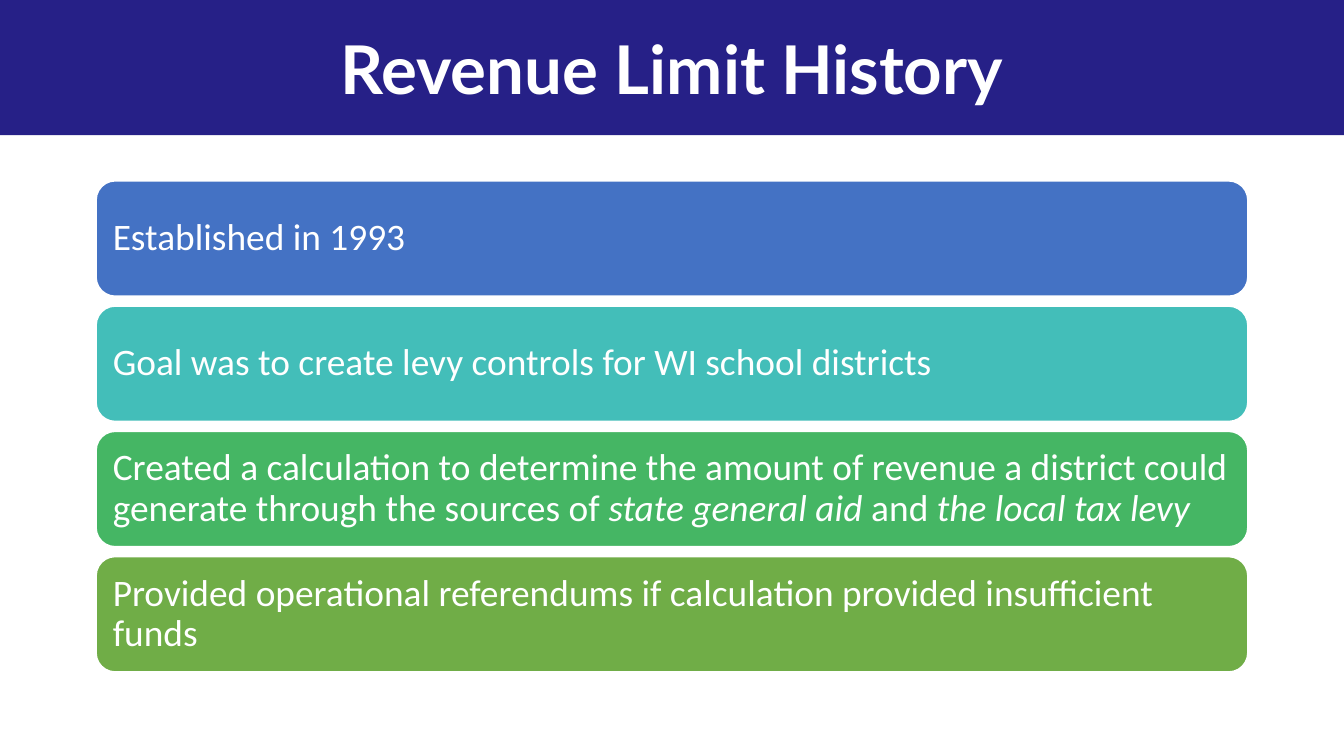
from pptx import Presentation
from pptx.dml.color import RGBColor
from pptx.enum.shapes import MSO_SHAPE
from pptx.enum.text import MSO_ANCHOR, MSO_AUTO_SIZE, PP_ALIGN
from pptx.util import Pt

WHITE = RGBColor(0xFF, 0xFF, 0xFF)
NAVY = RGBColor(0x26, 0x20, 0x87)
BLUE = RGBColor(0x44, 0x72, 0xC4)
TEAL = RGBColor(0x43, 0xBE, 0xB9)
GREEN = RGBColor(0x45, 0xB6, 0x64)
OLIVE = RGBColor(0x70, 0xAD, 0x47)

WIDTH, HEIGHT = 720, 405
HEAD = 72.5
LEFT, TOP = 51.4, 96.8
BAR_W, BAR_H, STEP = 617.2, 62, 67.1

# Each bar: fill colour and (text, italic) runs
BARS = [
    (BLUE, [("Established in 1993", False)]),
    (TEAL, [("Goal was to create levy controls for WI school districts", False)]),
    (GREEN, [
        ("Created a calculation to determine the amount of revenue a district "
         "could generate through the sources of ", False),
        ("state general aid ", True),
        ("and", False),
        (" the local tax levy", True),
    ]),
    (OLIVE, [("Provided operational referendums if calculation provided "
              "insufficient funds", False)]),
]


def add_run(para, text, font, size, bold=False, italic=False):
    run = para.add_run()
    run.text = text
    run.font.name = font
    run.font.size = Pt(size)
    run.font.bold = bold
    run.font.italic = italic
    run.font.color.rgb = WHITE


def add_band(slide):
    band = slide.shapes.add_shape(MSO_SHAPE.RECTANGLE, 0, 0, Pt(WIDTH), Pt(HEAD))
    band.shadow.inherit = False
    band.fill.solid()
    band.fill.fore_color.rgb = NAVY
    band.line.fill.background()
    # Behind the title: first in the tree after its two property elements
    slide.shapes._spTree.insert(2, band._element)


def set_title(slide, text):
    title = slide.shapes.title
    title.left, title.top = Pt(0), Pt(0)
    title.width, title.height = Pt(WIDTH), Pt(HEAD)
    frame = title.text_frame
    frame.auto_size = MSO_AUTO_SIZE.NONE
    frame.vertical_anchor = MSO_ANCHOR.MIDDLE
    para = frame.paragraphs[0]
    para.alignment = PP_ALIGN.CENTER
    add_run(para, text, "Lato", 36, bold=True)


def add_bar(slide, top, color, runs):
    bar = slide.shapes.add_shape(MSO_SHAPE.ROUNDED_RECTANGLE,
                                 Pt(LEFT), Pt(top), Pt(BAR_W), Pt(BAR_H))
    bar.shadow.inherit = False
    bar.fill.solid()
    bar.fill.fore_color.rgb = color
    bar.line.color.rgb = WHITE
    bar.line.width = Pt(1)
    frame = bar.text_frame
    frame.word_wrap = True
    frame.vertical_anchor = MSO_ANCHOR.MIDDLE
    frame.margin_left = frame.margin_right = Pt(6)
    frame.margin_top = frame.margin_bottom = Pt(6)
    para = frame.paragraphs[0]
    para.alignment = PP_ALIGN.LEFT
    para.line_spacing = 0.9
    for text, italic in runs:
        add_run(para, text, "Calibri", 20, italic=italic)


def main():
    prs = Presentation()
    prs.slide_width, prs.slide_height = Pt(WIDTH), Pt(HEIGHT)
    slide = prs.slides.add_slide(prs.slide_layouts[5])  # Title Only

    # Header
    add_band(slide)
    set_title(slide, "Revenue Limit History")

    # Stacked bars
    for i, (color, runs) in enumerate(BARS):
        add_bar(slide, TOP + i * STEP, color, runs)

    prs.save("out.pptx")


if __name__ == "__main__":
    main()
